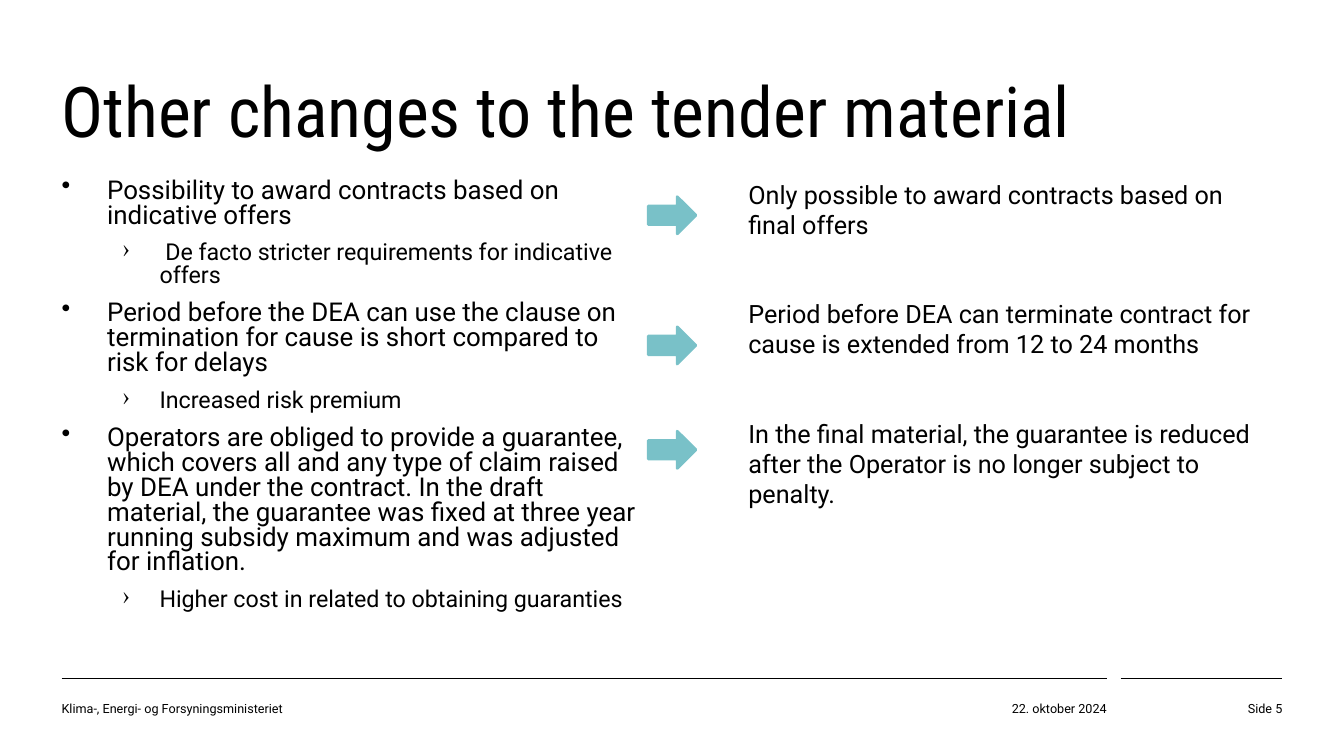
import lxml.etree
import pptx
import pptx.dml.color
import pptx.enum.shapes
import pptx.enum.text
import pptx.oxml
import pptx.oxml.ns
import pptx.util

Pt = pptx.util.Pt
ALIGN = pptx.enum.text.PP_ALIGN
ANCHOR = pptx.enum.text.MSO_ANCHOR
SHAPES = pptx.enum.shapes

BLACK = pptx.dml.color.RGBColor(0x00, 0x00, 0x00)
TEAL = pptx.dml.color.RGBColor(0x79, 0xC1, 0xC8)

LEFT, RIGHT = 44, 916
COLUMN_TOP, COLUMN_WIDTH, COLUMN_HEIGHT = 124.5, 419, 337.5
BULLETS = {0: ("•", 32.5, -32.5, 18.5), 1: ("›", 70, -26.5, 16.6)}

CHANGES = [
    (0, "Possibility to award contracts based on indicative offers"),
    (1, " De facto stricter requirements for indicative offers"),
    (0, "Period before the DEA can use the clause on termination for cause "
        "is short compared to risk for delays"),
    (1, "Increased risk premium"),
    (0, "Operators are obliged to provide a guarantee, which covers all and any "
        "type of claim raised by DEA under the contract. In the draft material, "
        "the guarantee was fixed at three year running subsidy maximum and was "
        "adjusted for inflation."),
    (1, "Higher cost in related to obtaining guaranties"),
]
OUTCOMES = [
    "Only possible to award contracts based on final offers",
    "Period before DEA can terminate contract for cause is extended "
    "from 12 to 24 months",
    "In the final material, the guarantee is reduced after the Operator "
    "is no longer subject to penalty.",
]
ARROW_TOPS = [140.5, 233.5, 308]


def set_frame(frame, insets, anchor):
    frame.word_wrap = True
    frame.auto_size = pptx.enum.text.MSO_AUTO_SIZE.NONE
    frame.vertical_anchor = anchor
    (frame.margin_left, frame.margin_top,
     frame.margin_right, frame.margin_bottom) = map(Pt, insets)


def set_font(para, size, name="Roboto"):
    para.font.size = Pt(size)
    para.font.name = name
    para.font.color.rgb = BLACK


def set_indent(para, margin, first_line, bullet=None):
    properties = para._p.get_or_add_pPr()
    properties.set("marL", str(Pt(margin)))
    properties.set("indent", str(Pt(first_line)))
    if bullet:
        mark = lxml.etree.SubElement(properties, pptx.oxml.ns.qn("a:buChar"))
        mark.set("char", bullet)


def add_paragraphs(frame, texts):
    """Fill the frame with one paragraph per text and return them."""
    paras = [frame.paragraphs[0]] + [frame.add_paragraph() for _ in texts[1:]]
    for para, text in zip(paras, texts):
        para.text = text
    return paras


def add_text_box(page, left, top, width, height, insets, anchor=ANCHOR.TOP):
    box = page.shapes.add_textbox(Pt(left), Pt(top), Pt(width), Pt(height))
    set_frame(box.text_frame, insets, anchor)
    return box.text_frame


def place_title(page, left, top, width, height):
    title = page.shapes.title
    title.left, title.top = Pt(left), Pt(top)
    title.width, title.height = Pt(width), Pt(height)
    set_frame(title.text_frame, (0, 3, 6.5, 3), ANCHOR.BOTTOM)
    para = add_paragraphs(title.text_frame, ["Other changes to the tender material"])[0]
    para.alignment = ALIGN.LEFT
    set_font(para, 50, "Roboto Condensed")


def add_changes(page, left, top, width, height):
    frame = add_text_box(page, left, top, width, height, (0, 3.6, 7.2, 3.6))
    paras = add_paragraphs(frame, [text for _, text in CHANGES])
    for para, (level, _) in zip(paras, CHANGES):
        bullet, margin, first_line, size = BULLETS[level]
        para.level = level
        para.line_spacing = 0.8
        para.space_before = Pt(4)
        para.space_after = Pt(6)
        set_indent(para, margin, first_line, bullet)
        set_font(para, size)


def add_outcomes(page, left, top, width, height):
    frame = add_text_box(page, left, top, width, height, (0, 3.6, 7.2, 3.6))
    for para in add_paragraphs(frame, OUTCOMES):
        para.space_after = Pt(42)
        set_indent(para, 37.5, 0)
        set_font(para, 18)


def add_arrows(page, left, width, height):
    for top in ARROW_TOPS:
        arrow = page.shapes.add_shape(SHAPES.MSO_SHAPE.RIGHT_ARROW,
                                      Pt(left), Pt(top), Pt(width), Pt(height))
        arrow.shadow.inherit = False
        arrow.fill.solid()
        arrow.fill.fore_color.rgb = TEAL
        arrow.line.color.rgb = TEAL
        arrow.line.width = Pt(2)


def add_footer(page, left, top, right):
    """Draw the two rules and, below them, ministry, date and page number."""
    date_right, number_left = right - 125.5, right - 115.5
    for start, end in ((left, date_right), (number_left, right)):
        rule = page.shapes.add_connector(SHAPES.MSO_CONNECTOR.STRAIGHT,
                                         Pt(start), Pt(top), Pt(end), Pt(top))
        rule.line.color.rgb = BLACK
        rule.line.width = Pt(0.75)
        lxml.etree.SubElement(rule._element.spPr, pptx.oxml.ns.qn("a:effectLst"))
    for text, start, end, alignment in (
            ("Klima-, Energi- og Forsyningsministeriet", left, left + 200, ALIGN.LEFT),
            ("22. oktober 2024", date_right - 130, date_right, ALIGN.RIGHT),
            ("Side 5", right - 75, right, ALIGN.RIGHT)):
        frame = add_text_box(page, start, top + 11.5, end - start, 20,
                             (0, 0, 0, 0), ANCHOR.MIDDLE)
        para = add_paragraphs(frame, [text])[0]
        para.alignment = alignment
        set_font(para, 9)


def main():
    deck = pptx.Presentation()
    deck.slide_width, deck.slide_height = Pt(960), Pt(540)
    page = deck.slides.add_slide(deck.slide_layouts.get_by_name("Title Only"))
    place_title(page, LEFT, 21.5, RIGHT - LEFT, 90)
    add_changes(page, LEFT, COLUMN_TOP, COLUMN_WIDTH, COLUMN_HEIGHT)
    add_outcomes(page, RIGHT - COLUMN_WIDTH, COLUMN_TOP, COLUMN_WIDTH, COLUMN_HEIGHT)
    add_arrows(page, LEFT + COLUMN_WIDTH, 34, 26.5)
    add_footer(page, LEFT, 484.5, RIGHT)
    deck.save("out.pptx")


if __name__ == "__main__":
    main()
